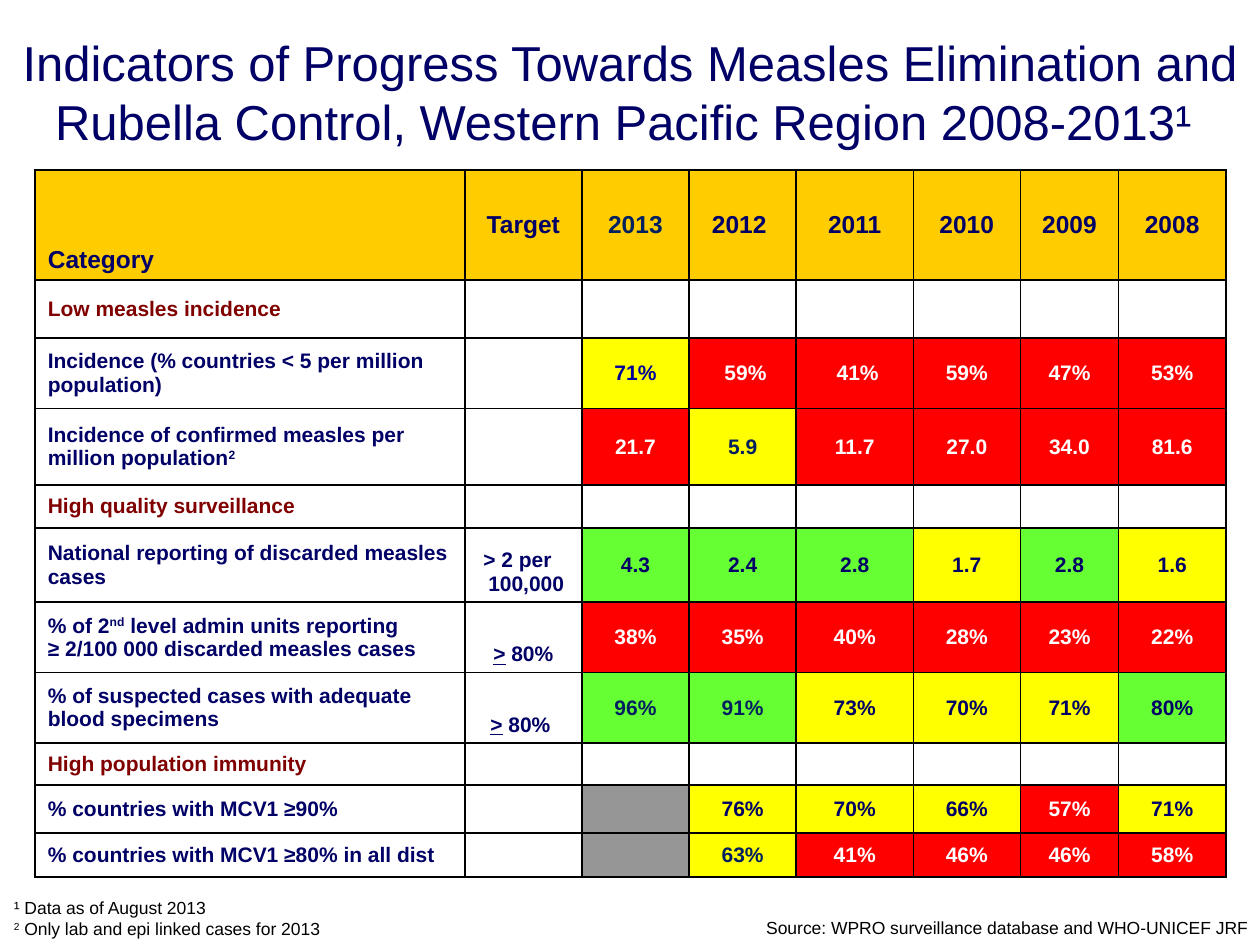
from lxml.etree import SubElement
from pptx import Presentation
from pptx.dml.color import RGBColor
from pptx.enum.text import MSO_ANCHOR, PP_ALIGN
from pptx.oxml.ns import qn
from pptx.util import Cm, Pt

NAVY = RGBColor(0x00, 0x00, 0x66)
DARK_BLUE = RGBColor(0x00, 0x20, 0x60)
BRIGHT_BLUE = RGBColor(0x00, 0x00, 0x99)
MAROON = RGBColor(0x80, 0x00, 0x00)
BLACK = RGBColor(0x00, 0x00, 0x00)
WHITE = RGBColor(0xFF, 0xFF, 0xFF)
GOLD = RGBColor(0xFF, 0xCC, 0x00)
RED = RGBColor(0xFF, 0x00, 0x00)
YELLOW = RGBColor(0xFF, 0xFF, 0x00)
GREEN = RGBColor(0x66, 0xFF, 0x33)
GREY = RGBColor(0x96, 0x96, 0x96)
FONT = "Arial"
SUPER, UNDERLINE = "super", "underline"

# A paragraph is a list of runs; a run is plain text or (text, style).
TITLE = [["Indicators of Progress Towards Measles Elimination and "
          "Rubella Control, Western Pacific Region 2008-2013¹ "]]
SOURCE = [["Source: WPRO surveillance database and WHO-UNICEF JRF"]]
FOOTNOTES = [["¹ Data as of August 2013"],
             [("2", SUPER), " Only lab and epi linked cases for 2013"]]

HEADINGS = ["Category", "Target", "2013", "2012 ", "2011", "2010", "2009", "2008"]
RATING_FILLS = {"R": RED, "Y": YELLOW, "G": GREEN, "-": GREY, " ": WHITE}
NO_VALUES = [""] * 6

# category runs, target paragraphs, yearly values, yearly ratings
INDICATORS = [
    (["Low measles incidence"], [], NO_VALUES, " " * 6),
    (["Incidence (% countries < 5 per million population)"], [],
     ["71%", " 59%", " 41%", "59%", "47%", "53%"], "YRRRRR"),
    (["Incidence of confirmed measles per million population", ("2", SUPER)], [],
     ["21.7", "5.9", "11.7", "27.0", "34.0", "81.6"], "RYRRRR"),
    (["High quality surveillance"], [], NO_VALUES, " " * 6),
    (["National reporting of discarded measles cases"],
     [["> 2 per  "], [" 100,000"]],
     ["4.3", "2.4", "2.8", "1.7", "2.8", "1.6"], "GGGYGY"),
    (["% of 2", ("nd", SUPER),
      " level admin units reporting \n≥ 2/100 000 discarded measles cases"],
     [[(">", UNDERLINE), " 80%"]],
     ["38%", "35%", "40%", "28%", "23%", "22%"], "RRRRRR"),
    (["% of suspected cases with adequate blood specimens"],
     [[(">", UNDERLINE), " 80% "]],
     ["96%", "91%", "73%", "70%", "71%", "80%"], "GGYYYG"),
    (["High population immunity"], [], NO_VALUES, " " * 6),
    (["% countries with MCV1 ≥90%"], [],
     ["", "76%", "70%", "66%", "57%", "71%"], "-YYYRY"),
    (["% countries with MCV1 ≥80% in all dist"], [],
     ["", "63%", "41%", "46%", "46%", "58%"], "-YRRRR"),
]
# (table row, table column) of text in another blue than navy
OTHER_BLUES = {(0, 2): DARK_BLUE, (2, 2): BRIGHT_BLUE, (3, 3): DARK_BLUE,
               (7, 2): DARK_BLUE, (7, 3): DARK_BLUE, (10, 3): DARK_BLUE}

COLUMN_WIDTHS = [8.66, 2.36, 2.16, 2.16, 2.36, 2.16, 1.98, 2.16]
ROW_HEIGHTS = [2.21, 1.17, 1.42, 1.55, 0.86, 1.5, 1.42, 1.42, 0.84, 0.97, 0.89]


def write(frame, paragraphs, size, color, align=PP_ALIGN.LEFT, bold=False):
    for index, runs in enumerate(paragraphs):
        paragraph = frame.paragraphs[0] if index == 0 else frame.add_paragraph()
        paragraph.alignment = align
        for part in runs:
            text, style = part if isinstance(part, tuple) else (part, None)
            for number, line in enumerate(text.split("\n")):
                if number:
                    paragraph.add_line_break()
                run = paragraph.add_run()
                run.text = line
                font = run.font
                font.name, font.size, font.bold = FONT, Pt(size), bold
                font.color.rgb = color
                if style == UNDERLINE:
                    font.underline = True
                elif style == SUPER:
                    font._element.set("baseline", "30000")


def add_label(slide, box, paragraphs, size, color, align, anchor=MSO_ANCHOR.TOP):
    frame = slide.shapes.add_textbox(*(Cm(length) for length in box)).text_frame
    frame.word_wrap = True
    frame.vertical_anchor = anchor
    write(frame, paragraphs, size, color, align)


def add_borders(cell):
    properties = cell._tc.get_or_add_tcPr()
    for side in ("a:lnL", "a:lnR", "a:lnT", "a:lnB"):
        line = SubElement(properties, qn(side), w=str(Pt(1)))
        SubElement(SubElement(line, qn("a:solidFill")), qn("a:srgbClr"), val=str(BLACK))


def fill_cell(cell, paragraphs, fill, color, size=12, align=PP_ALIGN.CENTER,
              anchor=MSO_ANCHOR.MIDDLE):
    add_borders(cell)
    cell.fill.solid()
    cell.fill.fore_color.rgb = fill
    cell.vertical_anchor = anchor
    if paragraphs:
        write(cell.text_frame, paragraphs, size, color, align, bold=True)
    else:  # keeps an empty cell from stretching its row
        SubElement(cell.text_frame.paragraphs[0]._p, qn("a:endParaRPr"), sz=str(size * 100))


def add_indicator_table(slide):
    table = slide.shapes.add_table(
        len(ROW_HEIGHTS), len(COLUMN_WIDTHS), Cm(0.71), Cm(3.43),
        Cm(sum(COLUMN_WIDTHS)), Cm(sum(ROW_HEIGHTS))).table
    for column, width in zip(table.columns, COLUMN_WIDTHS):
        column.width = Cm(width)
    for row, height in zip(table.rows, ROW_HEIGHTS):
        row.height = Cm(height)

    for column, heading in enumerate(HEADINGS):
        first = column == 0
        fill_cell(table.cell(0, column), [[heading]], GOLD,
                  OTHER_BLUES.get((0, column), NAVY), 14,
                  PP_ALIGN.LEFT if first else PP_ALIGN.CENTER,
                  MSO_ANCHOR.BOTTOM if first else MSO_ANCHOR.MIDDLE)

    for row, (category, target, values, ratings) in enumerate(INDICATORS, 1):
        section = values is NO_VALUES
        fill_cell(table.cell(row, 0), [category], WHITE,
                  MAROON if section else NAVY, align=PP_ALIGN.LEFT)
        fill_cell(table.cell(row, 1), target, WHITE, NAVY, anchor=MSO_ANCHOR.BOTTOM)
        for column, (value, rating) in enumerate(zip(values, ratings), 2):
            color = WHITE if rating == "R" else OTHER_BLUES.get((row, column), NAVY)
            fill_cell(table.cell(row, column), [[value]] if value else [],
                      RATING_FILLS[rating], color)


def main():
    deck = Presentation()
    deck.slide_width, deck.slide_height = Cm(25.4), Cm(19.05)
    slide = deck.slides.add_slide(deck.slide_layouts[6])
    add_indicator_table(slide)
    add_label(slide, (0, 0.53, 25.4, 2.62), TITLE, 28, NAVY,
              PP_ALIGN.CENTER, MSO_ANCHOR.MIDDLE)
    add_label(slide, (14.81, 18.36, 10.59, 0.69), SOURCE, 10, BLACK, PP_ALIGN.RIGHT)
    add_label(slide, (0.03, 17.96, 9.5, 1.12), FOOTNOTES, 10, BLACK, PP_ALIGN.LEFT)
    deck.save("out.pptx")


if __name__ == "__main__":
    main()
